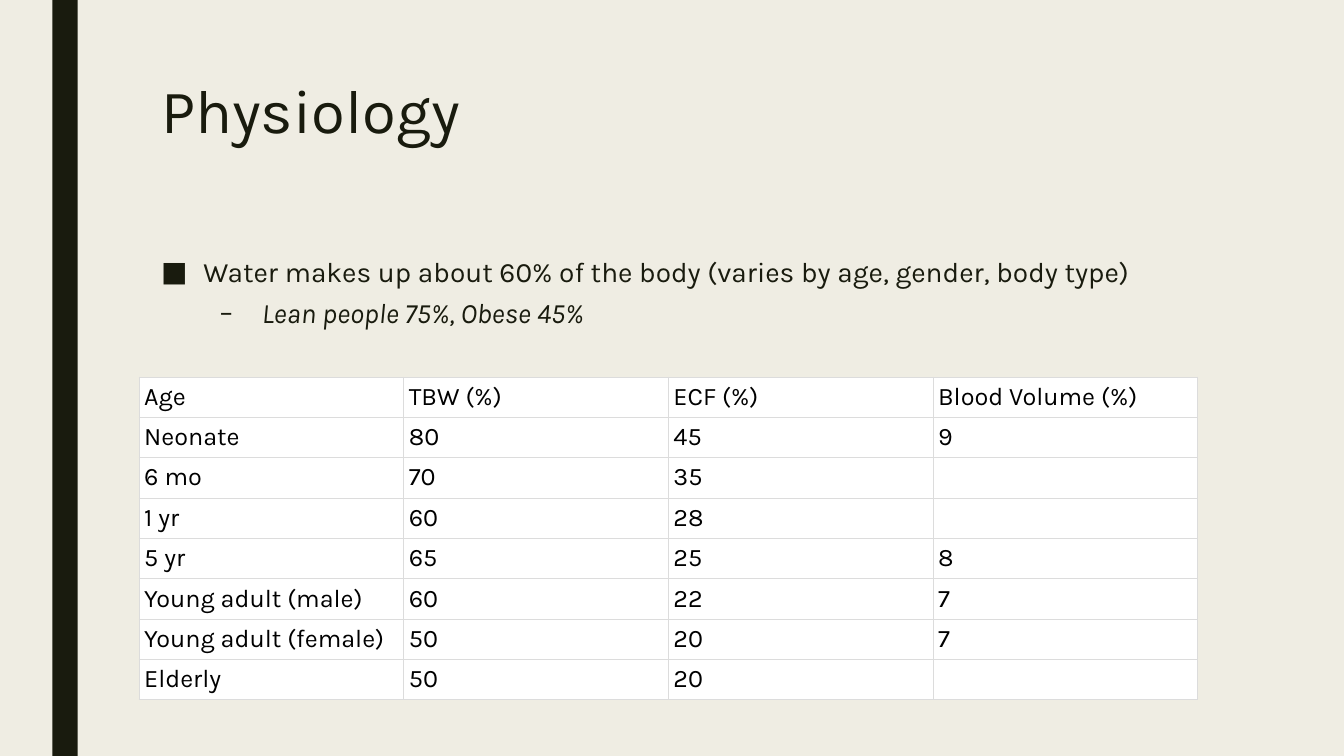
from lxml import etree
from pptx import Presentation
from pptx.dml.color import RGBColor
from pptx.enum.shapes import MSO_SHAPE
from pptx.oxml.ns import qn
from pptx.util import Inches, Pt

RECTANGLE = MSO_SHAPE.RECTANGLE

TITLE = "Physiology"
# text, bullet, level, left indent in inches, space before in points, italic
POINTS = [
    ("Water makes up about 60% of the body (varies by age, gender, body type)",
     "■", 0, 0.42, 10, False),
    ("Lean people 75%, Obese 45%", "–", 1, 1, 5, True),
]
WATER_BY_AGE = [
    ("Age", "TBW (%)", "ECF (%)", "Blood Volume (%)"),
    ("Neonate", "80", "45", "9"),
    ("6 mo", "70", "35", ""),
    ("1 yr", "60", "28", ""),
    ("5 yr", "65", "25", "8"),
    ("Young adult (male)", "60", "22", "7"),
    ("Young adult (female)", "50", "20", "7"),
    ("Elderly", "50", "20", ""),
]

FONT = "Karla"
INK, PAPER, BLACK, WHITE, GRID = "191B0E", "EFEDE3", "000000", "FFFFFF", "DCDCDC"
SLIDE_WIDTH, SLIDE_HEIGHT = 13.33, 7.5
CONTENT_LEFT, CONTENT_WIDTH = 1.5, 10.5
TABLE_LEFT, TABLE_TOP, TABLE_HEIGHT = 1.38, 3.74, 3.18
HANGING = 0.42
CELL_INSET = Inches(0.05)


def color(hex_code):
    return RGBColor.from_string(hex_code)


def style(paragraph, size, hex_code, italic=None):
    for run in paragraph.runs:
        run.font.name = FONT
        run.font.size = Pt(size)
        run.font.color.rgb = color(hex_code)
        run.font.italic = italic


def add_text_frame(slide, top, height):
    box = slide.shapes.add_textbox(Inches(CONTENT_LEFT), Inches(top),
                                   Inches(CONTENT_WIDTH), Inches(height))
    box.text_frame.word_wrap = True
    return box.text_frame


def add_bullet(paragraph, bullet, indent):
    properties = paragraph._p.get_or_add_pPr()
    properties.set("marL", str(Inches(indent)))
    properties.set("indent", str(-Inches(HANGING)))
    etree.SubElement(properties, qn("a:buFont")).set("typeface", FONT)
    etree.SubElement(properties, qn("a:buChar")).set("char", bullet)


def add_borders(cell):
    """Draw all four edges; they must stand before the cell's fill."""
    properties = cell._tc.get_or_add_tcPr()
    for position, edge in enumerate(("lnL", "lnR", "lnT", "lnB")):
        line = etree.Element(qn(f"a:{edge}"), w=str(Pt(0.75)))
        fill = etree.SubElement(line, qn("a:solidFill"))
        etree.SubElement(fill, qn("a:srgbClr"), val=GRID)
        properties.insert(position, line)


def add_side_bar(slide):
    bar = slide.shapes.add_shape(RECTANGLE, Inches(0.52), 0,
                                 Inches(0.25), Inches(SLIDE_HEIGHT))
    bar.shadow.inherit = False
    bar.fill.solid()
    bar.fill.fore_color.rgb = color(INK)
    bar.line.fill.background()


def add_title(slide):
    frame = add_text_frame(slide, 0.75, 1.62)
    frame.text = TITLE
    heading = frame.paragraphs[0]
    heading.line_spacing = 0.89
    style(heading, 44, INK)


def add_points(slide):
    frame = add_text_frame(slide, 2.5, 3.92)
    frame.text = "\n".join(point[0] for point in POINTS)
    for paragraph, point in zip(frame.paragraphs, POINTS):
        _, bullet, level, indent, space_before, italic = point
        paragraph.level = level
        paragraph.line_spacing = 0.94
        paragraph.space_before = Pt(space_before)
        paragraph.space_after = Pt(2)
        add_bullet(paragraph, bullet, indent)
        style(paragraph, 20, INK, italic)


def add_water_table(slide):
    rows, columns = len(WATER_BY_AGE), len(WATER_BY_AGE[0])
    table = slide.shapes.add_table(
        rows, columns, Inches(TABLE_LEFT), Inches(TABLE_TOP),
        Inches(CONTENT_WIDTH), Inches(TABLE_HEIGHT)).table
    table.first_row = table.horz_banding = False
    for row, values in enumerate(WATER_BY_AGE):
        for column, value in enumerate(values):
            cell = table.cell(row, column)
            cell.text = value
            cell.margin_left = cell.margin_right = CELL_INSET
            cell.margin_top = cell.margin_bottom = CELL_INSET
            cell.fill.solid()
            cell.fill.fore_color.rgb = color(WHITE)
            add_borders(cell)
            style(cell.text_frame.paragraphs[0], 18, BLACK)


def main():
    deck = Presentation()
    deck.slide_width, deck.slide_height = Inches(SLIDE_WIDTH), Inches(SLIDE_HEIGHT)
    slide = deck.slides.add_slide(deck.slide_layouts[6])
    slide.background.fill.solid()
    slide.background.fill.fore_color.rgb = color(PAPER)
    add_side_bar(slide)
    add_title(slide)
    add_points(slide)
    add_water_table(slide)
    deck.save("out.pptx")


if __name__ == "__main__":
    main()
